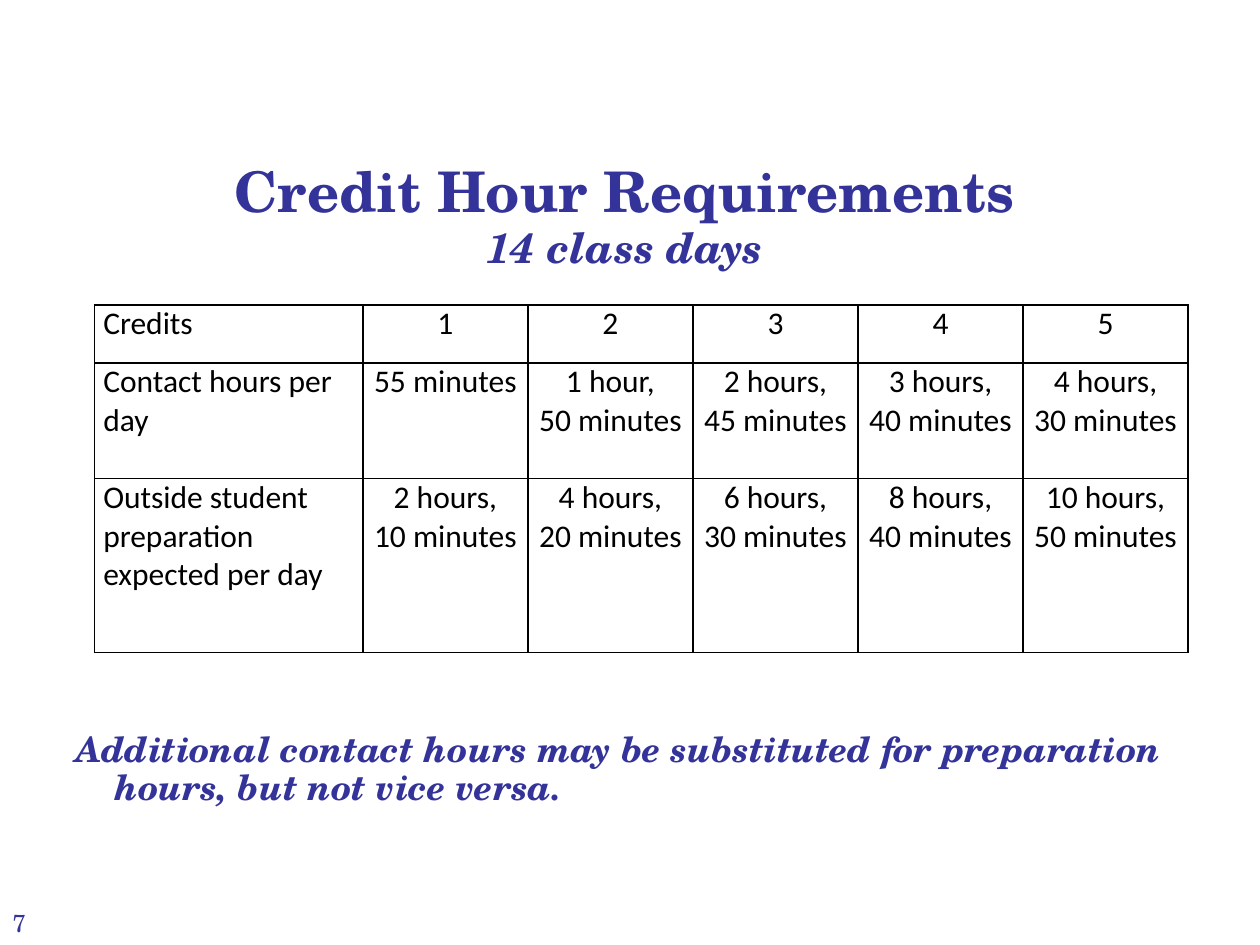
from typing import NamedTuple

from lxml.etree import SubElement
from pptx import Presentation
from pptx.dml.color import RGBColor
from pptx.enum.text import MSO_ANCHOR, MSO_AUTO_SIZE, PP_ALIGN as Align
from pptx.oxml.ns import qn
from pptx.util import Inches, Pt

INDIGO = RGBColor(0x33, 0x33, 0x99)
BLACK = RGBColor(0, 0, 0)
SERIF = "TeX Gyre Schola"
SANS = "Calibri"


class TableRow(NamedTuple):
    label: str
    height: float
    values: list[str]
    label_align: Align = Align.LEFT


ROWS = [
    TableRow("Credits", 0.46, ["1", "2", "3", "4", "5"], Align.JUSTIFY),
    TableRow("Contact hours per day", 0.92,
             ["55 minutes", "1 hour,\n50 minutes", "2 hours,\n45 minutes",
              "3 hours,\n40 minutes", "4 hours,\n30 minutes"]),
    TableRow("Outside student preparation expected per day", 1.38,
             ["2 hours,\n10 minutes", "4 hours,\n20 minutes", "6 hours,\n30 minutes",
              "8 hours,\n40 minutes", "10 hours,\n50 minutes"]),
]
LABEL_WIDTH, VALUE_WIDTH = 2.13, 1.31


def style_runs(paragraph, size: float, name: str, color: RGBColor,
               bold: bool = False, italic: bool = False) -> None:
    for run in paragraph.runs:
        font = run.font
        font.size, font.name = Pt(size), name
        font.bold, font.italic = bold, italic
        font.color.rgb = color


def place(shape, left: float, top: float, width: float, height: float) -> None:
    shape.left, shape.top = Inches(left), Inches(top)
    shape.width, shape.height = Inches(width), Inches(height)
    frame = shape.text_frame
    frame.word_wrap = True
    frame.auto_size = MSO_AUTO_SIZE.NONE
    frame.vertical_anchor = MSO_ANCHOR.TOP


def add_borders(cell) -> None:
    properties = cell._tc.get_or_add_tcPr()
    for side in ("lnL", "lnR", "lnT", "lnB"):
        line = SubElement(properties, qn(f"a:{side}"), w=str(Pt(1)))
        fill = SubElement(line, qn("a:solidFill"))
        SubElement(fill, qn("a:srgbClr"), val=str(BLACK))


def fill_cell(cell, text: str, align: Align) -> None:
    add_borders(cell)
    cell.fill.background()
    cell.margin_left = cell.margin_right = Inches(0.07)
    cell.margin_top = cell.margin_bottom = 0
    cell.text_frame.text = text
    for paragraph in cell.text_frame.paragraphs:
        paragraph.alignment = align
        style_runs(paragraph, 18, SANS, BLACK)


def add_heading(title) -> None:
    place(title, 0.21, 1.32, 9.5, 0.89)
    title.text_frame.text = "Credit Hour Requirements\n14 class days"
    heading, subheading = title.text_frame.paragraphs
    for paragraph in (heading, subheading):
        paragraph.alignment = Align.CENTER
        paragraph.line_spacing = 0.75
    heading.space_before, subheading.space_before = Pt(0), Pt(6)
    style_runs(heading, 32, SERIF, INDIGO, bold=True)
    style_runs(subheading, 24, SERIF, INDIGO, bold=True, italic=True)


def add_credit_table(slide) -> None:
    value_count = len(ROWS[0].values)
    width = LABEL_WIDTH + value_count * VALUE_WIDTH
    height = sum(row.height for row in ROWS)
    table = slide.shapes.add_table(
        len(ROWS), value_count + 1, Inches(0.75), Inches(2.42),
        Inches(width), Inches(height)).table
    table.first_row = table.horz_banding = False
    for index, column in enumerate(table.columns):
        column.width = Inches(VALUE_WIDTH if index else LABEL_WIDTH)
    for r, row in enumerate(ROWS):
        table.rows[r].height = Inches(row.height)
        fill_cell(table.cell(r, 0), row.label, row.label_align)
        for c, value in enumerate(row.values, start=1):
            fill_cell(table.cell(r, c), value, Align.CENTER)


def add_note(body) -> None:
    place(body, 0.5, 5.75, 9.08, 0.72)
    body.text_frame.text = ("Additional contact hours may be substituted for "
                            "preparation hours, but not vice versa.")
    note = body.text_frame.paragraphs[0]
    properties = note._p.get_or_add_pPr()
    properties.set("marL", str(Inches(0.31)))
    properties.set("indent", str(-Inches(0.31)))
    SubElement(properties, qn("a:buNone"))
    note.line_spacing, note.space_before = Pt(22), Pt(0)
    style_runs(note, 20, SERIF, INDIGO, bold=True, italic=True)


def add_page_number(slide) -> None:
    page = slide.shapes.add_textbox(0, 0, 0, 0)
    place(page, 0, 7.16, 0.83, 0.34)
    page.text_frame.text = "7"
    style_runs(page.text_frame.paragraphs[0], 14, SERIF, INDIGO)


def main() -> None:
    deck = Presentation()
    deck.slide_width, deck.slide_height = Inches(10), Inches(7.5)
    slide = deck.slides.add_slide(deck.slide_layouts[1])
    add_heading(slide.shapes.title)
    add_credit_table(slide)
    add_note(slide.placeholders[1])
    add_page_number(slide)
    deck.save("out.pptx")


if __name__ == "__main__":
    main()
